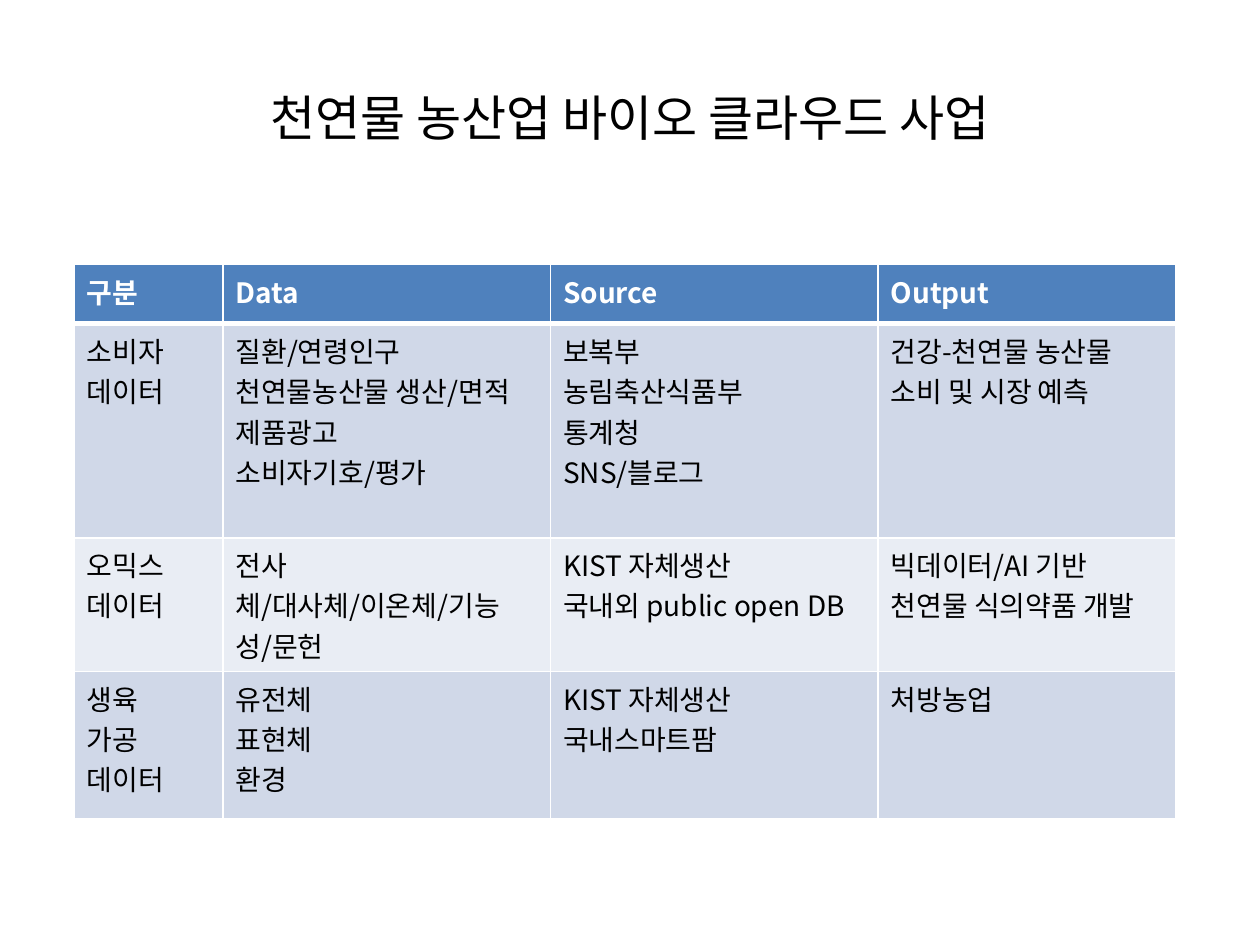
"""Builds the slide with the data table of the natural-product agriculture bio cloud project."""
from dataclasses import dataclass

from lxml.etree import SubElement
from pptx import Presentation
from pptx.dml.color import RGBColor as Color
from pptx.enum.text import MSO_ANCHOR as Anchor, PP_ALIGN as Align
from pptx.oxml.ns import qn
from pptx.util import Inches, Pt


@dataclass(frozen=True)
class Theme:
    font: str = "Noto Sans CJK KR"
    title_size: int = 28
    table_size: int = 16
    black: str = "000000"
    white: str = "FFFFFF"
    header: str = "4F81BD"
    bands: tuple = ("D0D8E8", "E9EDF4")


theme = Theme()


def write_text(frame, text, *, size, color=theme.black, bold=False, align=Align.LEFT):
    frame.word_wrap = True
    for index, line in enumerate(text.split("\n")):
        para = frame.paragraphs[0] if index == 0 else frame.add_paragraph()
        para.alignment = align
        span = para.add_run()
        span.text = line
        span.font.name = theme.font
        span.font.size = Pt(size)
        span.font.bold = bold
        span.font.color.rgb = Color.from_string(color)
        SubElement(span.font._element, qn("a:ea"), typeface=theme.font)


def set_borders(cell, **widths):
    properties = cell._tc.get_or_add_tcPr()
    for position, (side, width) in enumerate(widths.items()):
        line = SubElement(properties, qn(f"a:ln{side}"), w=str(Pt(width)))
        fill = SubElement(line, qn("a:solidFill"))
        SubElement(fill, qn("a:srgbClr"), val=theme.white)
        properties.insert(position, line)


deck = Presentation()
deck.slide_width, deck.slide_height = Inches(10), Inches(7.5)
page = deck.slides.add_slide(deck.slide_layouts[6])

title = page.shapes.add_textbox(Inches(0.5), Inches(0.3), Inches(9), Inches(1.25))
title.text_frame.vertical_anchor = Anchor.MIDDLE
write_text(title.text_frame, "천연물 농산업 바이오 클라우드 사업", size=theme.title_size, align=Align.CENTER)

rows = [
    ("구분", "Data", "Source", "Output"),
    (
        "소비자\n데이터",
        "질환/연령인구\n천연물농산물 생산/면적\n제품광고\n소비자기호/평가",
        "보복부\n농림축산식품부\n통계청\nSNS/블로그",
        "건강-천연물 농산물\n소비 및 시장 예측",
    ),
    (
        "오믹스\n데이터",
        "전사체/대사체/이온체/기능성/문헌",
        "KIST 자체생산\n국내외 public open DB",
        "빅데이터/AI 기반\n천연물 식의약품 개발",
    ),
    ("생육\n가공\n데이터", "유전체\n표현체\n환경", "KIST 자체생산\n국내스마트팜", "처방농업"),
]
column_widths = [1.18, 2.6, 2.6, 2.36]
row_heights = [0.47, 1.7, 1.06, 1.17]

table = page.shapes.add_table(
    len(rows), len(column_widths), Inches(0.59), Inches(2.1),
    Inches(sum(column_widths)), Inches(sum(row_heights)),
).table
for column, width in zip(table.columns, column_widths):
    column.width = Inches(width)
for row, height in zip(table.rows, row_heights):
    row.height = Inches(height)

for row_index, texts in enumerate(rows):
    is_header = row_index == 0
    background = theme.header if is_header else theme.bands[(row_index - 1) % 2]
    for column_index, text in enumerate(texts):
        cell = table.cell(row_index, column_index)
        cell.fill.solid()
        cell.fill.fore_color.rgb = Color.from_string(background)
        set_borders(cell, L=1, R=1, T=3 if row_index == 1 else 1, B=3 if is_header else 1)
        write_text(
            cell.text_frame, text, size=theme.table_size, bold=is_header,
            color=theme.white if is_header else theme.black,
        )

deck.save("out.pptx")
